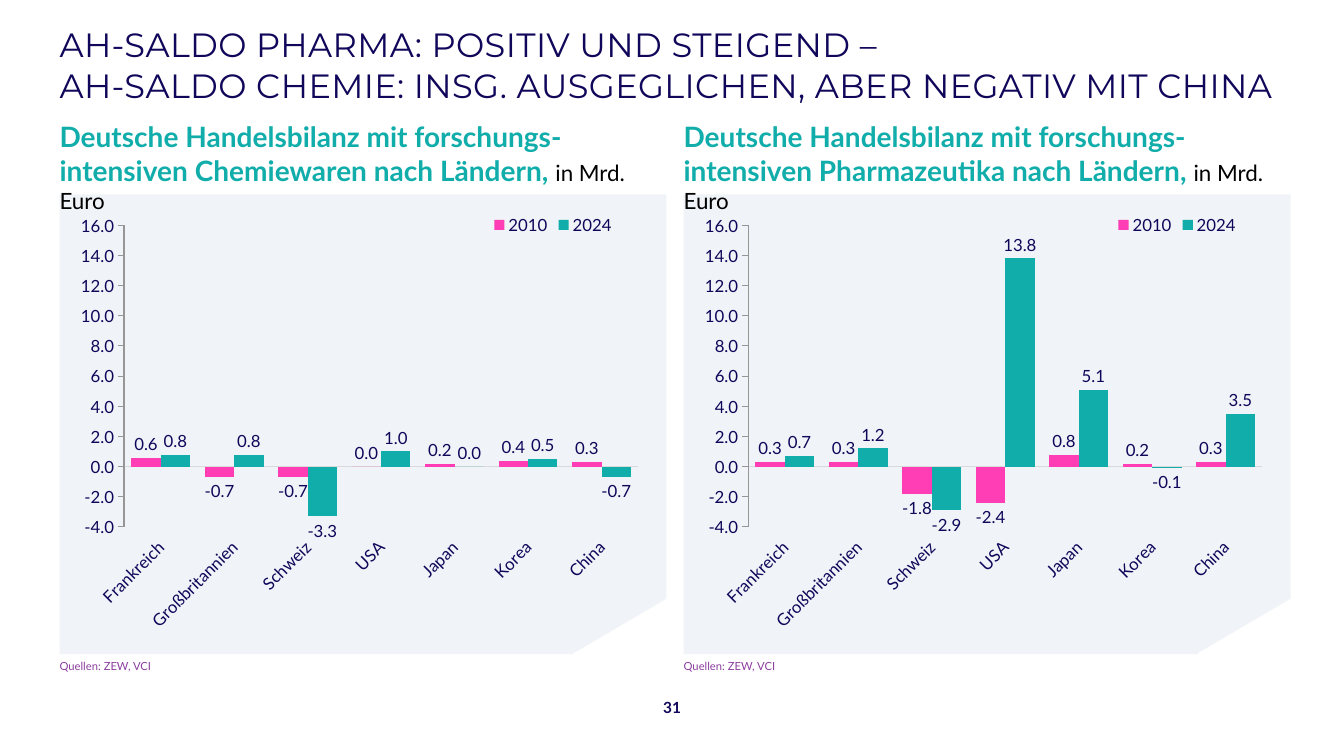
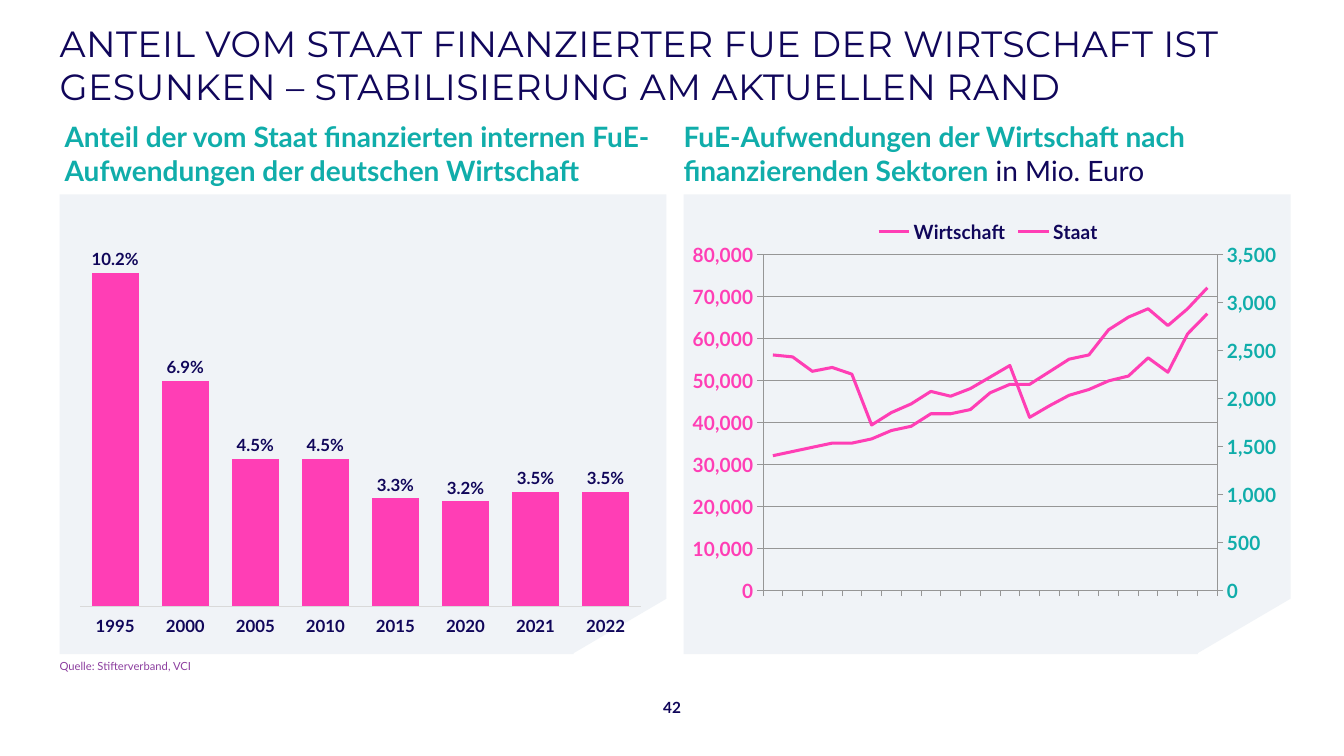
from copy import deepcopy
from dataclasses import dataclass

from pptx import Presentation
from pptx.chart.axis import ValueAxis
from pptx.chart.data import CategoryChartData
from pptx.dml.color import RGBColor
from pptx.enum.chart import (XL_CHART_TYPE, XL_LABEL_POSITION, XL_LEGEND_POSITION,
                             XL_TICK_LABEL_POSITION, XL_TICK_MARK)
from pptx.enum.text import MSO_ANCHOR, MSO_AUTO_SIZE, PP_ALIGN
from pptx.oxml import parse_xml
from pptx.oxml.ns import nsdecls, qn
from pptx.util import Inches, Pt


@dataclass(frozen=True)
class Theme:
    navy: str = "10065A"
    teal: str = "10ADAA"
    pink: str = "FF3EB5"
    plum: str = "8C3E9F"
    black: str = "000000"
    panel: str = "F0F3F7"
    pale: str = "D9D9D9"
    gray: str = "969696"
    head: str = "Montserrat"
    body: str = "Lato"
    lead: int = 20
    unit: int = 16
    large: int = 14
    label: int = 12
    page: int = 11
    note: int = 8


THEME = Theme()
LEFT, RIGHT = 0.59, 6.78


def style(font, size, color, bold=False, face=THEME.body):
    font.size, font.bold, font.name = Pt(size), bold, face
    font.color.rgb = RGBColor.from_string(color)


def write(par, text, space=0, **look):
    for row, part in enumerate(text.split("\n")):
        if row:
            par.add_line_break()
        run = par.add_run()
        run.text = part
        style(run.font, **look)
        if space:
            run.font._element.set("spc", str(int(space * 100)))


def stroke(line, color, width=0.75):
    line.color.rgb = RGBColor.from_string(color)
    line.width = Pt(width)


def place(node, x, y, w=None, h=None):
    for old in node.xpath("c:layout"):
        node.remove(old)
    inner = '<c:layoutTarget val="inner"/>' if w else ""
    modes = '<c:xMode val="edge"/><c:yMode val="edge"/>'
    sizes = "".join(f'<c:{k} val="{v}"/>' for k, v in zip("xywh", (x, y, w, h)) if v is not None)
    layout = parse_xml(f'<c:layout {nsdecls("c")}><c:manualLayout>{inner}{modes}{sizes}'
                       '</c:manualLayout></c:layout>')
    first = node.find(qn("c:legendPos"))
    if first is None:
        node.insert(0, layout)
    else:
        first.addnext(layout)


class Deck:
    def __init__(self, theme):
        self.theme = theme
        self.file = Presentation()
        self.file.slide_width, self.file.slide_height = Inches(13.33), Inches(7.5)
        self.slide = None

    def start(self, title, size, page):
        t = self.theme
        self.slide = self.file.slides.add_slide(self.file.slide_layouts[4])
        par = self.fill(0, LEFT, 0.15, 12.41, 0.98, MSO_ANCHOR.MIDDLE, 0.04)
        write(par, title, size=size, color=t.navy, face=t.head, space=0.3)
        for x in (LEFT, RIGHT):
            self.panel(x)
        box = self.slide.shapes.add_textbox(Inches(6.37), Inches(6.88), Inches(0.59), Inches(0.28))
        par = self.frame(box, MSO_ANCHOR.MIDDLE)
        par.alignment = PP_ALIGN.CENTER
        write(par, page, size=t.page, color=t.navy, bold=True)

    def frame(self, shape, anchor=MSO_ANCHOR.TOP, pad=0):
        frame = shape.text_frame
        frame.word_wrap, frame.auto_size = True, MSO_AUTO_SIZE.NONE
        frame.vertical_anchor = anchor
        frame.margin_left = frame.margin_right = 0
        frame.margin_top = frame.margin_bottom = Inches(pad)
        return frame.paragraphs[0]

    def fill(self, index, x, y, w, h, anchor=MSO_ANCHOR.TOP, pad=0):
        hold = next(p for p in self.slide.placeholders if p.placeholder_format.idx == index)
        hold.left, hold.top, hold.width, hold.height = map(Inches, (x, y, w, h))
        par = self.frame(hold, anchor, pad)
        props = par._p.get_or_add_pPr()
        props.set("marL", "0")
        props.set("indent", "0")
        props.append(parse_xml(f'<a:buNone {nsdecls("a")}/>'))
        par.alignment, par.space_before = PP_ALIGN.LEFT, Pt(0)
        return par

    def panel(self, x):
        dots = [(x + 6.02, 1.93), (x + 6.02, 5.94), (x + 5.1, 6.48), (x + 5.1, 6.49), (x, 6.49)]
        pen = self.slide.shapes.build_freeform(Inches(x), Inches(1.93))
        pen.add_line_segments([(Inches(a), Inches(b)) for a, b in dots])
        shape = pen.convert_to_shape()
        shape.shadow.inherit = False
        shape.fill.solid()
        shape.fill.fore_color.rgb = RGBColor.from_string(self.theme.panel)
        shape.line.fill.background()
        self.slide.shapes.title._element.addprevious(shape._element)

    def lead(self, index, x, text, unit="", **look):
        par = self.fill(index, x, 1.19, 6.08, 0.31)
        write(par, text, size=self.theme.lead, color=self.theme.teal, bold=True)
        if unit:
            write(par, unit, **look)

    def source(self, index, x, text):
        par = self.fill(index, x, 6.54, 5.08, 0.13)
        write(par, text, size=self.theme.note, color=self.theme.plum)

    def chart(self, kind, x, cats, rows, size, bold, plot, low, high, step, form):
        data = CategoryChartData()
        data.categories = cats
        for name, vals in rows:
            data.add_series(name, vals)
        chart = self.slide.shapes.add_chart(kind, Inches(x + 0.09), Inches(2.05),
                                            Inches(5.79), Inches(4.29), data).chart
        chart.has_title = chart.has_legend = False
        for font in (chart.font, chart.category_axis.tick_labels.font,
                     chart.value_axis.tick_labels.font):
            style(font, size, self.theme.navy, bold)
        axis = chart.value_axis
        axis.minimum_scale, axis.maximum_scale, axis.major_unit = low, high, step
        axis.tick_labels.number_format = form
        axis.tick_labels.number_format_is_linked = False
        axis.has_major_gridlines = False
        axis.major_tick_mark = XL_TICK_MARK.OUTSIDE
        stroke(axis.format.line, self.theme.gray)
        place(chart._chartSpace.xpath("c:chart/c:plotArea")[0], *plot)
        return chart

    def legend(self, chart, x, y, size, bold, over):
        chart.has_legend = True
        chart.legend.position = XL_LEGEND_POSITION.TOP
        chart.legend.include_in_layout = not over
        style(chart.legend.font, size, self.theme.navy, bold)
        place(chart.legend._element, x, y)

    def bars(self, x, cats, rows, form, bold=False, overlap=0, **look):
        t = self.theme
        chart = self.chart(XL_CHART_TYPE.COLUMN_CLUSTERED, x, cats, rows, t.label, bold,
                           form=form, **look)
        chart.category_axis.major_tick_mark = XL_TICK_MARK.NONE
        chart.category_axis.tick_label_position = XL_TICK_LABEL_POSITION.LOW
        stroke(chart.category_axis.format.line, t.pale)
        plot = chart.plots[0]
        plot.gap_width, plot.overlap, plot.vary_by_categories = 50, overlap, False
        for row, color in zip(plot.series, (t.pink, t.teal)):
            row.invert_if_negative = False
            row.format.fill.solid()
            row.format.fill.fore_color.rgb = RGBColor.from_string(color)
            tags = row.data_labels
            tags.show_value, tags.position = True, XL_LABEL_POSITION.OUTSIDE_END
            tags.number_format, tags.number_format_is_linked = form, False
            style(tags.font, t.label, t.navy, bold)
        return chart

    def trade(self, x, first, last):
        lands = ["Frankreich", "Großbritannien", "Schweiz", "USA", "Japan", "Korea", "China"]
        chart = self.bars(x, lands, [("2010", first), ("2024", last)], "0.0",
                          plot=(0.095, 0.043, 0.881, 0.698), low=-4, high=16, step=2)
        chart.category_axis._element.xpath("c:txPr/a:bodyPr")[0].set("rot", "-2700000")
        self.legend(chart, 0.72, 0.01, self.theme.label, False, True)

    def share(self, x, cats, vals):
        chart = self.bars(x, cats, [("Series 1", vals)], "0.0%", True, -27,
                          plot=(0.02, 0.017, 0.96, 0.907), low=0, high=0.12, step=0.02)
        chart.value_axis.visible = False

    def lines(self, x, cats, rows):
        t = self.theme
        chart = self.chart(XL_CHART_TYPE.LINE, x, cats, rows, t.large, True,
                           (0.107, 0.11, 0.802, 0.777), 0, 80000, 10000, "#,##0")
        chart.plots[0].vary_by_categories = False
        for row in chart.plots[0].series:
            row.smooth = False
            stroke(row.format.line, t.pink, 2.25)
        base, axis = chart.category_axis, chart.value_axis
        base.tick_label_position = XL_TICK_LABEL_POSITION.NONE
        base.major_tick_mark = XL_TICK_MARK.OUTSIDE
        stroke(base.format.line, t.gray)
        self.second(chart, 3500, 500)
        style(axis.tick_labels.font, t.large, t.pink, True)
        axis.has_major_gridlines = True
        stroke(axis.major_gridlines.format.line, t.gray)
        self.legend(chart, 0.3, 0.02, t.large, True, False)

    def second(self, chart, high, step):
        main = chart.plots[0]._element
        twin = deepcopy(main)
        main.remove(main.xpath("c:ser")[1])
        twin.remove(twin.xpath("c:ser")[0])
        main.addnext(twin)
        old = [chart.category_axis._element, chart.value_axis._element]
        base, side = new = [deepcopy(node) for node in old]
        old[-1].addnext(base)
        base.addnext(side)
        for node in (twin, *new):
            for key in node.xpath("c:axId | c:crossAx"):
                key.set("val", key.get("val")[1:])
        base.xpath("c:delete")[0].set("val", "1")
        side.xpath("c:axPos")[0].set("val", "r")
        side.xpath("c:crosses")[0].set("val", "max")
        axis = ValueAxis(side)
        axis.maximum_scale, axis.major_unit = high, step
        style(axis.tick_labels.font, self.theme.large, self.theme.teal, True)

    def close(self):
        for hold in list(self.slide.placeholders):
            if not hold.text_frame.text:
                hold._element.getparent().remove(hold._element)


def main():
    t = THEME
    deck = Deck(t)
    deck.start("AH-SALDO PHARMA: POSITIV UND STEIGEND –\n"
               "AH-SALDO CHEMIE: INSG. AUSGEGLICHEN, ABER NEGATIV MIT CHINA", 24, "31")
    trades = [
        (LEFT, "Chemiewaren", [0.6, -0.7, -0.7, 0, 0.2, 0.4, 0.3], [0.8, 0.8, -3.3, 1, 0, 0.5, -0.7]),
        (RIGHT, "Pharmazeutika", [0.3, 0.3, -1.8, -2.4, 0.8, 0.2, 0.3],
         [0.7, 1.2, -2.9, 13.8, 5.1, -0.1, 3.5]),
    ]
    for index, (x, goods, first, last) in zip((1, 3), trades):
        deck.lead(index, x, f"Deutsche Handelsbilanz mit forschungs-intensiven {goods} nach Ländern, ",
                  "in Mrd. Euro", size=t.unit, color=t.black)
        deck.source(index + 1, x, "Quellen: ZEW, VCI")
        deck.trade(x, first, last)
    deck.close()

    deck.start("ANTEIL VOM STAAT FINANZIERTER FUE DER WIRTSCHAFT IST GESUNKEN – "
               "STABILISIERUNG AM AKTUELLEN RAND", 26, "42")
    deck.lead(1, 0.64, "Anteil der vom Staat finanzierten internen FuE-Aufwendungen "
              "der deutschen Wirtschaft")
    deck.lead(3, RIGHT, "FuE-Aufwendungen der Wirtschaft nach finanzierenden Sektoren",
              " in Mio. Euro", size=t.lead, color=t.navy)
    deck.source(2, LEFT, "Quelle: Stifterverband, VCI")
    deck.share(LEFT, ["1995", "2000", "2005", "2010", "2015", "2020", "2021", "2022"],
               [0.102, 0.069, 0.045, 0.045, 0.033, 0.032, 0.035, 0.035])
    firms = [32000, 33000, 34000, 35000, 35000, 36000, 38000, 39000, 42000, 42000, 43000, 47000,
             49000, 49000, 52000, 55000, 56000, 62000, 65000, 67000, 63000, 67000, 72000]
    state = [2450, 2430, 2280, 2320, 2250, 1720, 1850, 1940, 2070, 2020, 2100, 2220,
             2340, 1800, 1920, 2030, 2090, 2180, 2230, 2420, 2270, 2670, 2880]
    deck.lines(RIGHT, [str(year) for year in range(2000, 2023)],
               [("Wirtschaft", firms), ("Staat", state)])
    deck.close()
    deck.file.save("out.pptx")


if __name__ == "__main__":
    main()
